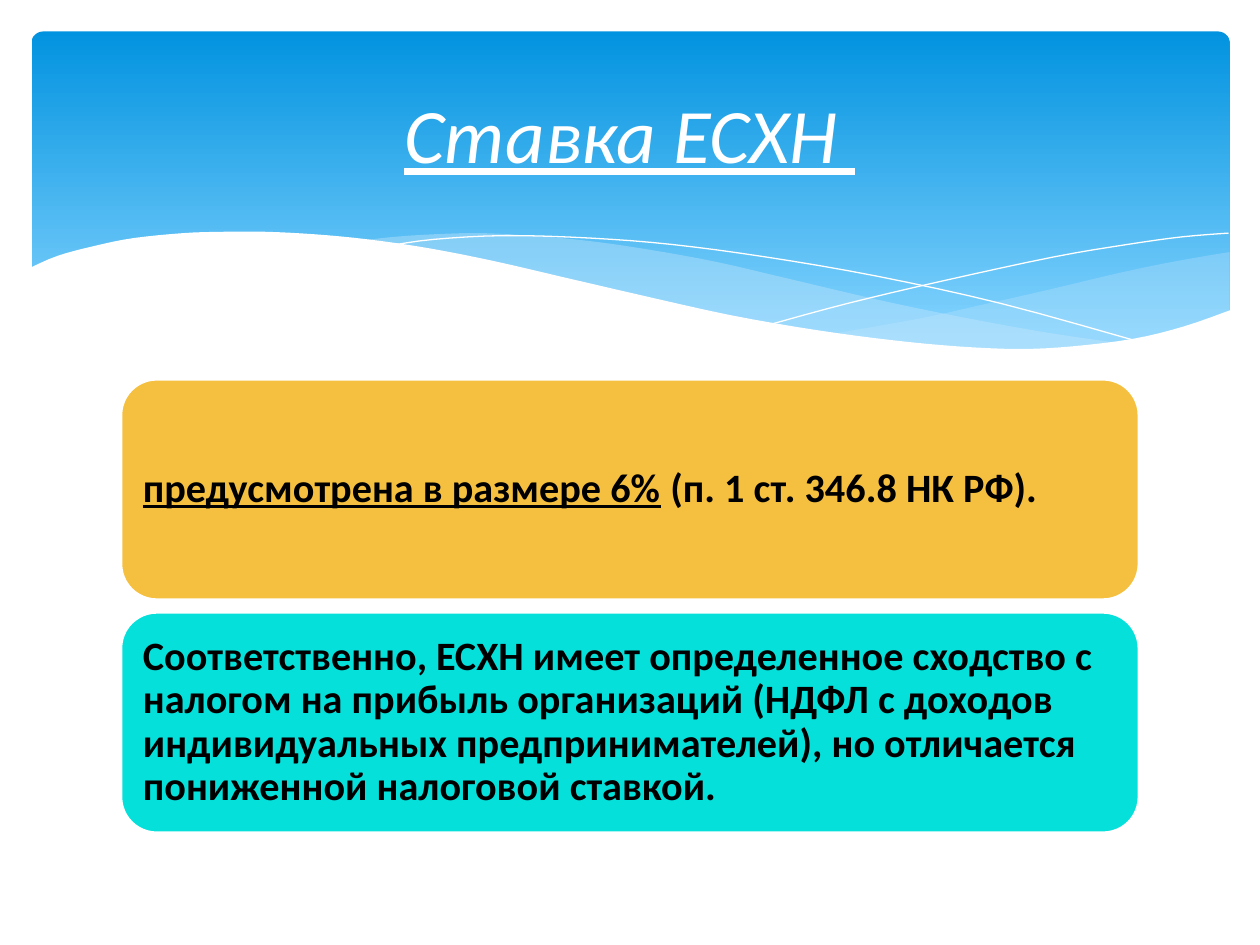
"""Build the slide on the agricultural tax rate: a wave banner and two text panels."""
from dataclasses import dataclass

from lxml.etree import SubElement
from pptx import Presentation
from pptx.dml.color import RGBColor
from pptx.enum.shapes import MSO_SHAPE as Shape
from pptx.enum.text import MSO_ANCHOR as Anchor, PP_ALIGN as Align
from pptx.oxml.ns import qn
from pptx.slide import Slide
from pptx.util import Inches, Pt

WHITE = RGBColor(0xFF, 0xFF, 0xFF)
BLACK = RGBColor(0x00, 0x00, 0x00)
DEEP_BLUE = RGBColor(0x02, 0x93, 0xE0)
SKY_BLUE = RGBColor(0x83, 0xD3, 0xFE)
PALE_BLUE = RGBColor(0xC6, 0xE7, 0xFC)
AMBER = RGBColor(0xF5, 0xC0, 0x40)
TURQUOISE = RGBColor(0x05, 0xE0, 0xDB)

RIGHT_WAVE_TOP = [(9.76, 2), (9.35, 2.07), (8.91, 2.16), (8.32, 2.3), (7.79, 2.42),
                  (7.29, 2.53), (6.61, 2.65)]
RIGHT_WAVE_BOTTOM = [(6.61, 2.65), (7.05, 2.71), (7.57, 2.76), (8.03, 2.78), (8.54, 2.76),
                     (8.97, 2.7), (9.35, 2.62), (9.76, 2.47)]
LONG_WAVE_TOP = [(8.93, 2.73), (8.37, 2.65), (7.75, 2.54), (7.06, 2.4), (6.29, 2.22),
                 (5.69, 2.08), (5.14, 1.98), (4.65, 1.91), (4.2, 1.87), (3.8, 1.85),
                 (3.44, 1.86), (3.13, 1.88), (2.86, 1.91)]
LONG_WAVE_BOTTOM = [(2.86, 1.91), (3.42, 1.99), (4.04, 2.11), (4.49, 2.22), (5.3, 2.4),
                    (6.01, 2.55), (6.65, 2.66), (7.22, 2.74), (7.73, 2.77), (8.18, 2.78),
                    (8.57, 2.77), (8.93, 2.73)]
FALLING_LINE = [(3.09, 1.95), (3.44, 1.9), (4.01, 1.87), (4.69, 1.89), (5.33, 1.94),
                (6.08, 2.04), (6.95, 2.19), (7.95, 2.41), (9.07, 2.72)]
RISING_LINE = [(6.13, 2.57), (6.72, 2.41), (7.48, 2.23), (8.36, 2.04), (8.95, 1.94),
               (9.38, 1.88), (9.75, 1.85)]
BANNER_EDGE = [(9.77, 2.46), (9.4, 2.59), (8.99, 2.69), (8.5, 2.75), (8.09, 2.77),
               (7.61, 2.75), (7.08, 2.7), (6.48, 2.62), (5.79, 2.5), (5.03, 2.33),
               (4.47, 2.2), (3.91, 2.07), (3.4, 1.97), (2.92, 1.9), (2.5, 1.86),
               (2.11, 1.84), (1.77, 1.84), (1.46, 1.85), (1.06, 1.89), (0.76, 1.95),
               (0.46, 2.03), (0.23, 2.13)]


def smooth(knots, steps=4):
    """Return points on a Catmull-Rom curve through the knots."""
    padded = [knots[0], *knots, knots[-1]]
    points = [knots[0]]
    for a, b, c, d in zip(padded, padded[1:], padded[2:], padded[3:]):
        for step in range(1, steps + 1):
            t = step / steps
            points.append(tuple(
                q + t / 2 * (r - p + t * (2 * p - 5 * q + 4 * r - s + t * (3 * (q - r) + s - p)))
                for p, q, r, s in zip(a, b, c, d)))
    return points


@dataclass
class Painter:
    """Hold the style and the current slide."""

    page: Slide
    font: str = "Calibri"

    def block(self, left, top, width, height):
        """Add a plain rounded rectangle."""
        box = self.page.shapes.add_shape(
            Shape.ROUNDED_RECTANGLE, Inches(left), Inches(top), Inches(width), Inches(height))
        box.shadow.inherit = False
        return box

    def banner(self, left, top, width, height):
        """Add the rounded banner with a vertical gradient."""
        box = self.block(left, top, width, height)
        box.adjustments[0] = 0.034
        box.line.fill.background()
        box.fill.gradient()
        box.fill.gradient_angle = 270
        for stop, position, color in zip(box.fill.gradient_stops, (0, 0.9), (DEEP_BLUE, SKY_BLUE)):
            stop.position = position
            stop.color.rgb = color

    def outline(self, points, close):
        """Add a freeform through points given in inches."""
        corners = [(Inches(x), Inches(y)) for x, y in points]
        builder = self.page.shapes.build_freeform(*corners[0])
        builder.add_line_segments(corners[1:], close=close)
        form = builder.convert_to_shape()
        form.shadow.inherit = False
        return form

    def wave(self, points, color, opacity=100):
        """Add a filled wave."""
        form = self.outline(points, True)
        form.line.fill.background()
        form.fill.solid()
        form.fill.fore_color.rgb = color
        if opacity < 100:
            tint = form.element.spPr.find(qn("a:solidFill"))[0]
            SubElement(tint, qn("a:alpha"), val=str(opacity * 1000))

    def strand(self, knots):
        """Add a thin open curve."""
        form = self.outline(smooth(knots), False)
        form.fill.background()
        form.line.color.rgb = WHITE
        form.line.width = Pt(0)

    def add_span(self, para, text, size, color, bold=False, italic=False, underline=False):
        """Add one run of text."""
        span = para.add_run()
        span.text = text
        font = span.font
        font.name, font.size, font.color.rgb = self.font, Pt(size), color
        font.bold, font.italic, font.underline = bold, italic, underline

    def panel(self, top, color, spans):
        """Add a coloured panel with bold text."""
        box = self.block(0.95, top, 8.1, 1.77)
        box.fill.solid()
        box.fill.fore_color.rgb = color
        box.line.color.rgb = WHITE
        box.line.width = Pt(3)
        frame = box.text_frame
        frame.word_wrap = True
        frame.vertical_anchor = Anchor.MIDDLE
        frame.margin_left = frame.margin_right = Inches(0.1)
        frame.margin_top = frame.margin_bottom = Inches(0.1)
        para = frame.paragraphs[0]
        para.alignment = Align.LEFT
        para.line_spacing = 0.9
        for text, underline in spans:
            self.add_span(para, text, 23, BLACK, bold=True, underline=underline)

    def title(self, left, top, width, height, spans):
        """Add the centred, underlined title."""
        box = self.page.shapes.add_textbox(
            Inches(left), Inches(top), Inches(width), Inches(height))
        frame = box.text_frame
        frame.word_wrap = True
        frame.vertical_anchor = Anchor.MIDDLE
        para = frame.paragraphs[0]
        para.alignment = Align.CENTER
        for text, italic in spans:
            self.add_span(para, text, 44, WHITE, italic=italic, underline=True)


def main():
    """Draw the slide and save it."""
    deck = Presentation()
    deck.slide_width, deck.slide_height = Inches(10), Inches(7.5)
    painter = Painter(deck.slides.add_slide(deck.slide_layouts[6]))

    painter.banner(0.25, 0.25, 9.51, 2.7)
    painter.wave(smooth(RIGHT_WAVE_TOP) + smooth(RIGHT_WAVE_BOTTOM), PALE_BLUE, 29)
    painter.wave(smooth(LONG_WAVE_TOP) + smooth(LONG_WAVE_BOTTOM), PALE_BLUE, 40)
    painter.strand(FALLING_LINE)
    painter.strand(RISING_LINE)
    painter.wave(smooth(BANNER_EDGE) + [(0.23, 3.29), (9.77, 3.29)], WHITE)

    panels = [
        (AMBER, [("предусмотрена в размере 6%", True), (" (п. 1 ст. 346.8 НК РФ).", False)]),
        (TURQUOISE, [("Соответственно, ЕСХН имеет определенное сходство с налогом на прибыль "
                      "организаций (НДФЛ с доходов индивидуальных предпринимателей), но "
                      "отличается пониженной налоговой ставкой.", False)]),
    ]
    for index, (color, spans) in enumerate(panels):
        painter.panel(3 + 1.85 * index, color, spans)
    painter.title(0.5, 0.37, 9, 1.37, [("Ставка ЕСХН", True), (" ", False)])
    deck.save("out.pptx")


if __name__ == "__main__":
    main()
